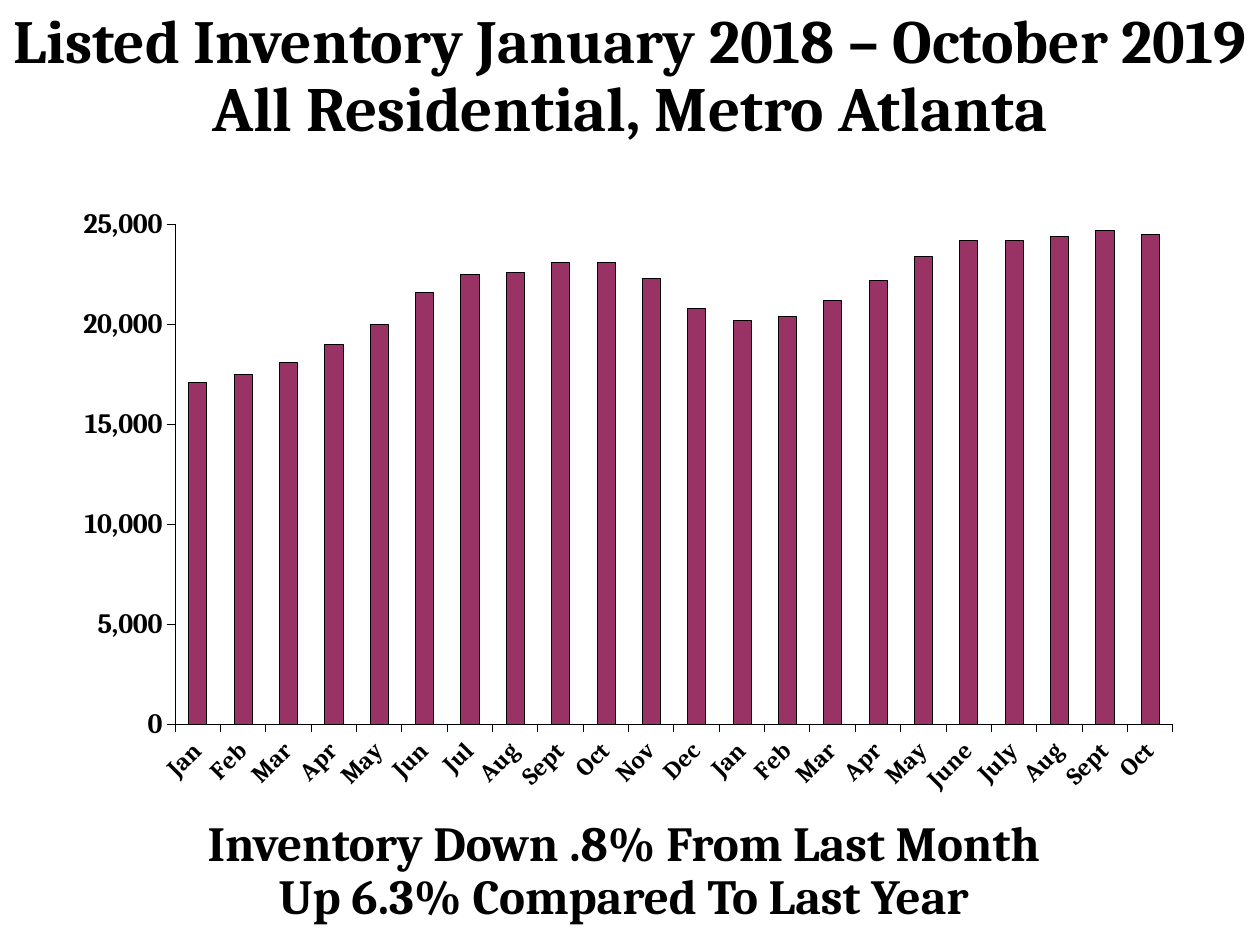
from lxml.etree import SubElement
from pptx import Presentation
from pptx.chart.data import CategoryChartData
from pptx.dml.color import RGBColor
from pptx.enum.chart import XL_CHART_TYPE, XL_TICK_MARK
from pptx.enum.text import MSO_ANCHOR, MSO_AUTO_SIZE, PP_ALIGN
from pptx.oxml.ns import qn
from pptx.util import Inches, Pt

# Content
FONT, BLACK, PLUM = "Cambria", "000000", "993366"
TITLE = [("Listed Inventory January 2018 – October 2019", 35),
         ("All Residential, Metro Atlanta", 36)]
SUMMARY = [("Inventory Down .8% From Last Month", 28),
           ("Up 6.3% Compared To Last Year", 28)]
INVENTORY = [
    ("Jan", 17100), ("Feb", 17500), ("Mar", 18100), ("Apr", 19000),
    ("May", 20000), ("Jun", 21600), ("Jul", 22500), ("Aug", 22600),
    ("Sept", 23100), ("Oct", 23100), ("Nov", 22300), ("Dec", 20800),
    ("Jan", 20200), ("Feb", 20400), ("Mar", 21200), ("Apr", 22200),
    ("May", 23400), ("June", 24200), ("July", 24200), ("Aug", 24400),
    ("Sept", 24700), ("Oct", 24500),
]
PLOT_AREA = {"x": 0.107, "y": 0.088, "w": 0.876, "h": 0.717}


def color(value):
    return RGBColor.from_string(value)


def style_font(font, size):
    font.name, font.size, font.bold = FONT, Pt(size), True
    font.color.rgb = color(BLACK)


def place(shape, left, top, width, height):
    shape.left, shape.top = Inches(left), Inches(top)
    shape.width, shape.height = Inches(width), Inches(height)


def write_lines(shape, lines):
    frame = shape.text_frame
    frame.word_wrap = True
    frame.auto_size = MSO_AUTO_SIZE.NONE
    frame.vertical_anchor = MSO_ANCHOR.MIDDLE
    frame.margin_left = frame.margin_right = 0
    frame.text = "\n".join(text for text, size in lines)
    for paragraph, (text, size) in zip(frame.paragraphs, lines):
        paragraph.alignment = PP_ALIGN.CENTER
        paragraph.line_spacing = 0.9
        style_font(paragraph.runs[0].font, size)


def style_axis(axis, size):
    axis.has_major_gridlines = False
    axis.major_tick_mark = XL_TICK_MARK.OUTSIDE
    axis.minor_tick_mark = XL_TICK_MARK.NONE
    axis.format.line.color.rgb = color(BLACK)
    axis.format.line.width = Pt(0.25)
    style_font(axis.tick_labels.font, size)


def set_plot_area(chart):
    plot_area = chart._chartSpace.find(".//" + qn("c:plotArea"))
    for old_layout in plot_area.findall(qn("c:layout")):
        plot_area.remove(old_layout)
    layout = SubElement(plot_area, qn("c:layout"))
    plot_area.insert(0, layout)
    manual = SubElement(layout, qn("c:manualLayout"))
    settings = [("layoutTarget", "inner"), ("xMode", "edge"), ("yMode", "edge")]
    for name, value in settings + list(PLOT_AREA.items()):
        SubElement(manual, qn("c:" + name)).set("val", str(value))


presentation = Presentation()
presentation.slide_width, presentation.slide_height = Inches(10), Inches(7.5)
slide = presentation.slides.add_slide(presentation.slide_layouts[5])

# Title
title = slide.shapes.title
place(title, 0, 0.08, 10, 1.08)
write_lines(title, TITLE)

# Inventory chart
data = CategoryChartData(number_format="#,##0")
data.categories = [month for month, count in INVENTORY]
data.add_series("Series 1", [count for month, count in INVENTORY])
chart = slide.shapes.add_chart(
    XL_CHART_TYPE.COLUMN_CLUSTERED, Inches(0.42), Inches(1.29),
    Inches(9.04), Inches(5.54), data).chart
chart.has_legend = False
chart.has_title = False
style_font(chart.font, 14)
set_plot_area(chart)

plot = chart.plots[0]
plot.gap_width = 150
plot.vary_by_categories = False
bars = plot.series[0].format
bars.fill.solid()
bars.fill.fore_color.rgb = color(PLUM)
bars.line.color.rgb = color(BLACK)
bars.line.width = Pt(0.06)

# Axes, with slanted month labels
style_axis(chart.category_axis, 14)
style_axis(chart.value_axis, 16)
chart.value_axis.minimum_scale = 0
chart.value_axis.maximum_scale = 25000
chart.value_axis.major_unit = 5000
chart.value_axis.tick_labels.number_format = "#,##0"
chart.value_axis.tick_labels.number_format_is_linked = False
label_body = chart.category_axis._element.find(
    qn("c:txPr") + "/" + qn("a:bodyPr"))
label_body.set("rot", "-2700000")
label_body.set("vert", "horz")

# Summary below the chart
summary = slide.shapes.add_textbox(0, 0, 0, 0)
place(summary, 0, 6.42, 9.9, 1)
write_lines(summary, SUMMARY)

presentation.save("out.pptx")
